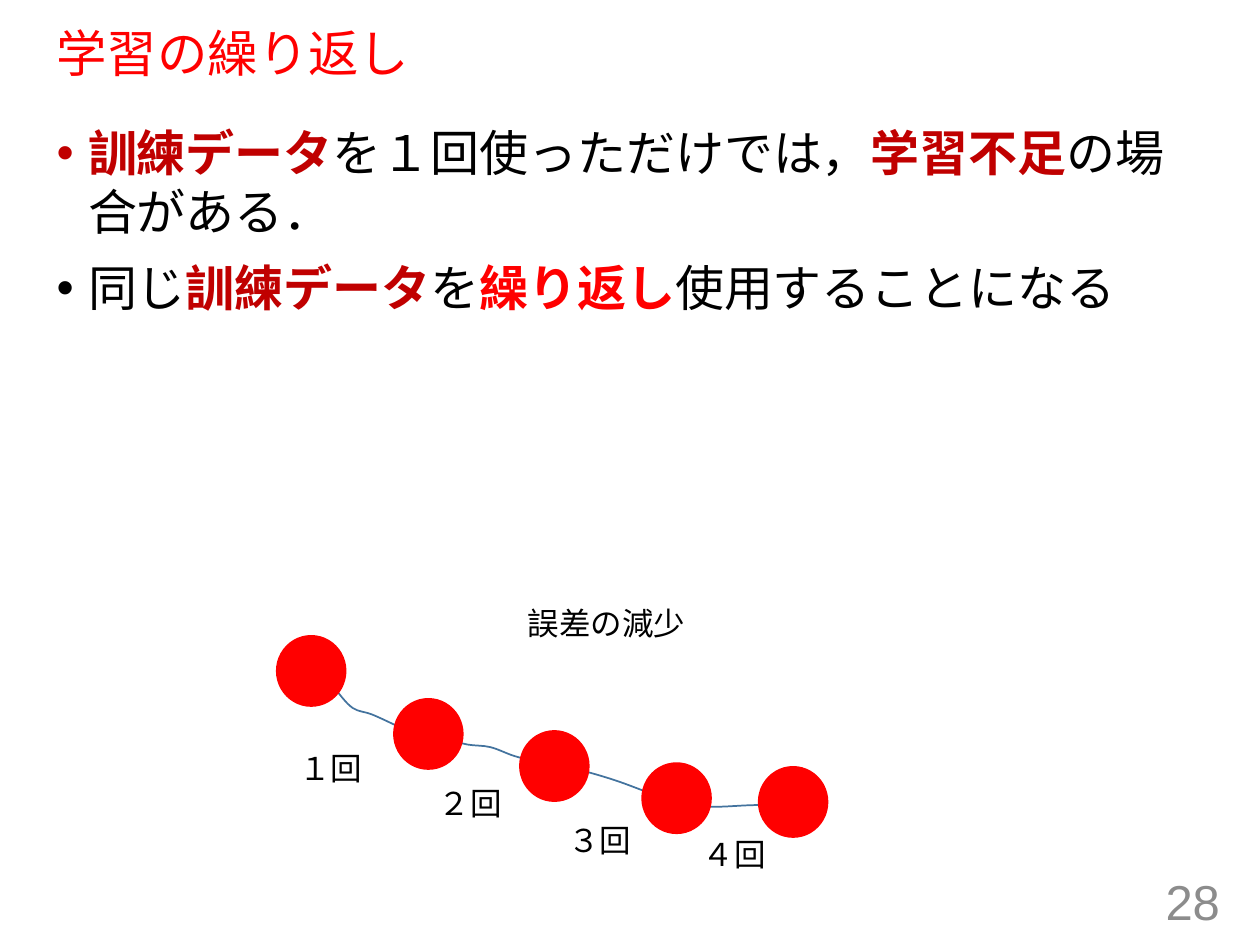
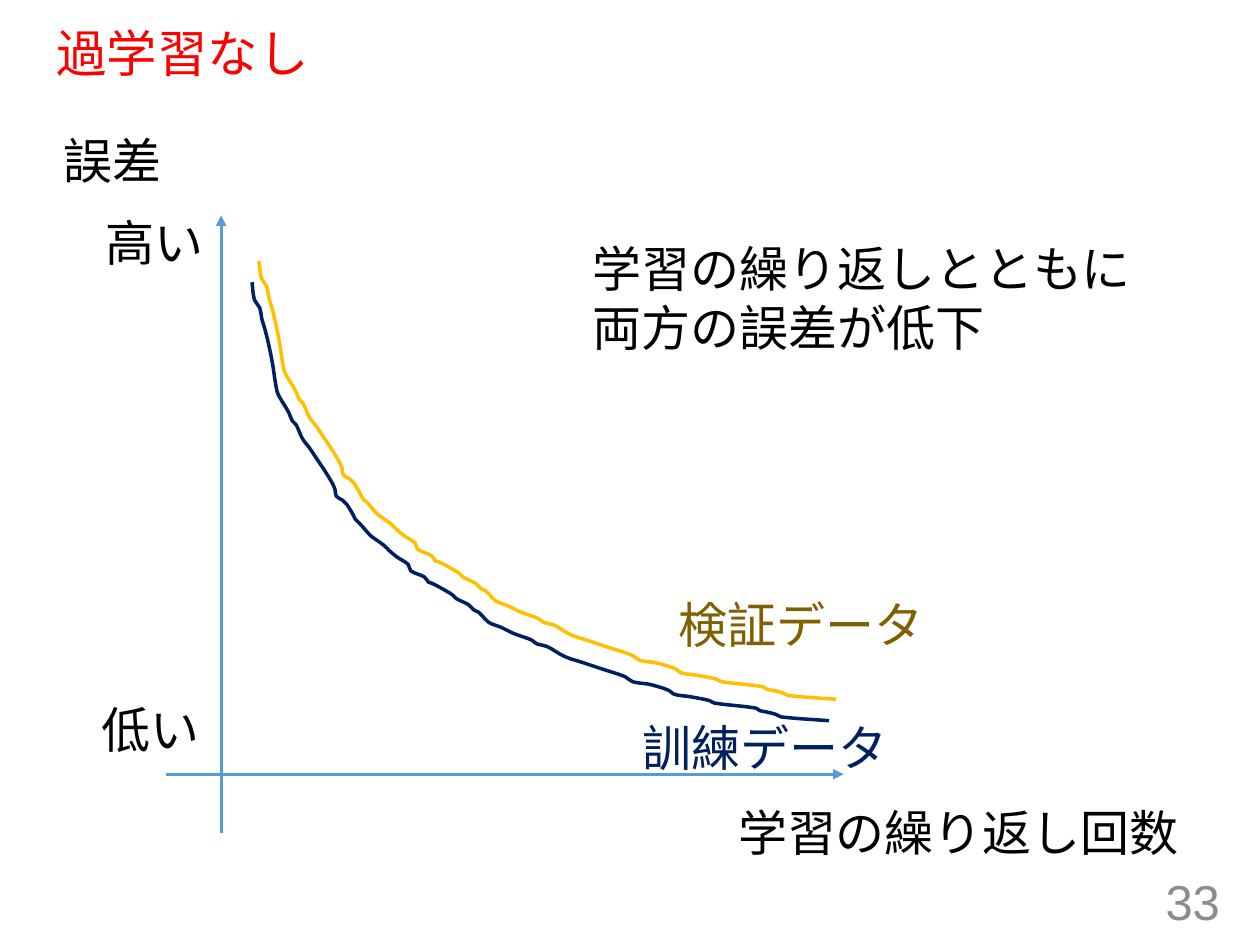
from dataclasses import dataclass
from math import dist
from lxml.etree import SubElement as Sub
from pptx import Presentation
from pptx.dml.color import RGBColor as Rgb
from pptx.enum.shapes import MSO_CONNECTOR as Conn, MSO_SHAPE as Kind
from pptx.enum.text import MSO_ANCHOR as Anchor, MSO_AUTO_SIZE as Auto, PP_ALIGN as Align
from pptx.oxml.ns import qn
from pptx.slide import Slide
from pptx.util import Emu, Inches, Pt

WIDE, HIGH = Inches(10), Inches(7.5)
COLS, ROWS = 100, 75
HUES = {
    "red": "FF0000", "dark": "C00000", "black": "000000", "gray": "8C8C8C",
    "steel": "43739E", "axis": "5B9BD5", "navy": "002060", "gold": "FFC000", "brown": "806000",
}
Point = tuple[float, float]
Run = tuple[str, str, bool]


@dataclass(frozen=True)
class Label:
    text: str
    col: float
    row: float
    wide: float
    high: float = 5.7
    size: float = 28
    hue: str = "black"


@dataclass(frozen=True)
class Curve:
    points: list[Point]
    hue: str
    weight: float
    right: float = 0
    down: float = 0


BODY: list[list[Run]] = [
    [("訓練データ", "dark", True), ("を１回使っただけでは，", "black", False),
     ("学習不足", "dark", True), ("の場合がある．", "black", False)],
    [("同じ", "black", False), ("訓練データ", "dark", True), ("を", "black", False),
     ("繰り返し", "red", True), ("使用することになる", "black", False)],
]
BALLS: list[Point] = [(21.9, 50.4), (31.2, 55.4), (41.2, 57.95), (50.9, 60.5), (60.15, 60.8)]
TURNS: list[Point] = [(22.75, 58.95), (33.85, 61.75), (44.1, 64.7), (54.8, 65.8)]
PATH: list[Point] = [
    (24.7, 52.6), (26.6, 54.7), (28, 56.2), (29.5, 56.7), (33.6, 58.5), (35.5, 58.7),
    (37.1, 59.1), (38.9, 59.3), (40.8, 60), (43.1, 60.6), (45.5, 61), (48.4, 61.8),
    (54.8, 63.9), (60.2, 63.9),
]
LOSS: list[Point] = [
    (20, 22.4), (20.2, 23.8), (20.6, 24.4), (20.8, 25.4), (20.9, 25.7), (21.2, 26.8),
    (21.6, 28.7), (22, 31.1), (22.3, 31.7), (22.9, 32.7), (23.2, 33.4), (23.5, 33.7),
    (24, 34.8), (24.6, 35.6), (25.2, 36.5), (25.8, 37.4), (26.4, 38.4), (26.6, 38.9),
    (26.7, 39.4), (27.2, 39.7), (27.5, 40), (28, 40.8), (28.2, 41.2), (28.6, 41.6),
    (29.4, 42.5), (29.8, 42.8), (30.5, 43.3), (30.9, 43.7), (31.5, 44.2), (32.4, 44.8),
    (32.6, 45.3), (33.7, 45.8), (34, 46.2), (34.3, 46.3), (34.7, 46.5), (35.9, 47.2),
    (36.2, 47.5), (37.2, 48), (37.6, 48.4), (38, 48.6), (38.3, 48.9), (38.8, 49.4),
    (39.8, 49.8), (40.6, 50.2), (41.1, 50.4), (42.2, 50.8), (42.6, 51.1), (43.4, 51.3),
    (44.8, 52.1), (46.3, 52.6), (46.9, 52.8), (47.8, 53.1), (49.6, 53.7), (50.2, 54.1),
    (51.5, 54.3), (51.9, 54.4), (53.1, 54.8), (53.5, 55.1), (54.8, 55.3), (56.3, 55.6),
    (56.7, 55.8), (60, 56.2), (60.3, 56.4), (60.8, 56.5), (61.6, 56.7), (62, 56.9),
    (65.8, 57.2),
]
CURVES = [Curve(LOSS, "navy", 2), Curve(LOSS, "gold", 2, 0.55, -1.7)]
AXES: list[tuple[Point, Point]] = [
    ((17.55, 66.1), (17.55, 17.1)), ((13.15, 61.45), (66.95, 61.45)),
]
NAMES = [
    Label("訓練データ", 50, 56.45, 21.7, hue="navy"),
    Label("検証データ", 52.9, 46.7, 21.7, hue="brown"),
    Label("誤差", 4.05, 9.9, 9.9),
    Label("学習の繰り返し回数", 57.6, 63.2, 37.4),
    Label("高い", 7.4, 16.35, 9.9),
    Label("低い", 7.1, 55, 9.9),
    Label("学習の繰り返しとともに\n両方の誤差が低下", 46.05, 18.45, 45.2, 10.4),
]


def x(col: float) -> Emu:
    return Emu(round(WIDE * col / COLS))


def y(row: float) -> Emu:
    return Emu(round(HIGH * row / ROWS))


def tint(hue: str) -> Rgb:
    return Rgb.from_string(HUES[hue])


def frame(slide: Slide, col: float, row: float, wide: float, high: float):
    text = slide.shapes.add_textbox(x(col), y(row), x(wide), y(high)).text_frame
    text.word_wrap = True
    return text


def style(para, size: float, hue: str, face: str) -> None:
    para.font.size, para.font.name = Pt(size), face
    para.font.color.rgb = tint(hue)


def note(slide: Slide, item: Label) -> None:
    text = frame(slide, item.col, item.row, item.wide, item.high)
    text.word_wrap, text.auto_size = False, Auto.SHAPE_TO_FIT_TEXT
    text.text = item.text
    for para in text.paragraphs:
        style(para, item.size, item.hue, "Calibri")


def base(deck, title: str, page: int) -> Slide:
    slide = deck.slides.add_slide(deck.slide_layouts[6])
    head = frame(slide, 3.5, 1.9, 92.5, 5.1)
    head.text, head.vertical_anchor = title, Anchor.MIDDLE
    head.paragraphs[0].line_spacing = 0.9
    style(head.paragraphs[0], 28.8, "red", "Arial")
    foot = frame(slide, 75.3, 69.5, 22.5, 4)
    foot.text, foot.vertical_anchor = str(page), Anchor.MIDDLE
    foot.paragraphs[0].alignment = Align.RIGHT
    style(foot.paragraphs[0], 28, "gray", "Arial")
    return slide


def bullet(para, hue: str) -> None:
    props = para._p.get_or_add_pPr()
    props.set("marL", str(x(2.5)))
    props.set("indent", str(-x(2.5)))
    Sub(Sub(props, qn("a:buClr")), qn("a:srgbClr"), val=HUES[hue])
    Sub(props, qn("a:buFont"), typeface="Arial")
    Sub(props, qn("a:buChar"), char="•")


def body(slide: Slide, items: list[list[Run]]) -> None:
    text = frame(slide, 3.5, 9.25, 92.5, 58.3)
    for rank, runs in enumerate(items):
        para = text.add_paragraph() if rank else text.paragraphs[0]
        bullet(para, runs[0][1])
        if rank:
            para.space_before = Pt(10)
        para.font.size, para.font.name = Pt(28), "Arial"
        for words, hue, bold in runs:
            run = para.add_run()
            run.text, run.font.bold = words, bold
            run.font.color.rgb = tint(hue)


def lean(spot: Point, back: Point, front: Point, reach: float) -> Point:
    scale = reach / 3 / dist(back, front)
    return tuple(s + (f - b) * scale for s, b, f in zip(spot, back, front))


def bend(shape, spots: list[Point]) -> None:
    ends = [spots[0], *spots, spots[-1]]
    left, top = shape.left, shape.top
    lines = list(shape._element.iter(qn("a:lnTo")))
    for line, a, b, c, d in zip(lines, ends, ends[1:], ends[2:], ends[3:]):
        line.tag = qn("a:cubicBezTo")
        line.clear()
        reach = dist(b, c)
        for col, row in (lean(b, a, c, reach), lean(c, d, b, reach), c):
            Sub(line, qn("a:pt"), x=str(round(col - left)), y=str(round(row - top)))


def trace(slide: Slide, curve: Curve) -> None:
    spots = [(x(col + curve.right), y(row + curve.down)) for col, row in curve.points]
    pen = slide.shapes.build_freeform(*spots[0])
    pen.add_line_segments(spots[1:], close=False)
    shape = pen.convert_to_shape()
    bend(shape, spots)
    shape.shadow.inherit = False
    shape.fill.background()
    shape.line.color.rgb, shape.line.width = tint(curve.hue), Pt(curve.weight)


def ball(slide: Slide, spot: Point) -> None:
    shape = slide.shapes.add_shape(Kind.OVAL, x(spot[0]), y(spot[1]), x(5.6), y(5.7))
    shape.shadow.inherit = False
    shape.fill.solid()
    shape.fill.fore_color.rgb = tint("red")
    shape.line.fill.background()


def axis(slide: Slide, start: Point, end: Point) -> None:
    link = slide.shapes.add_connector(
        Conn.STRAIGHT, x(start[0]), y(start[1]), x(end[0]), y(end[1]))
    link.line.color.rgb, link.line.width = tint("axis"), Pt(1.75)
    Sub(link.line._get_or_add_ln(), qn("a:tailEnd"), type="triangle")
    Sub(link._element.spPr, qn("a:effectLst"))


def repeat(deck) -> None:
    slide = base(deck, "学習の繰り返し", 28)
    body(slide, BODY)
    trace(slide, Curve(PATH, "steel", 1))
    for spot in BALLS:
        ball(slide, spot)
    for count, (col, row) in zip("１２３４", TURNS):
        note(slide, Label(f"{count}回", col, row, 7.1, 4, 18))
    note(slide, Label("誤差の減少", 40.9, 47.45, 14.6, 4, 18))


def decline(deck) -> None:
    slide = base(deck, "過学習なし", 33)
    for start, end in AXES:
        axis(slide, start, end)
    for curve in CURVES:
        trace(slide, curve)
    for item in NAMES:
        note(slide, item)


def main() -> None:
    deck = Presentation()
    deck.slide_width, deck.slide_height = WIDE, HIGH
    repeat(deck)
    decline(deck)
    deck.save("out.pptx")


if __name__ == "__main__":
    main()
